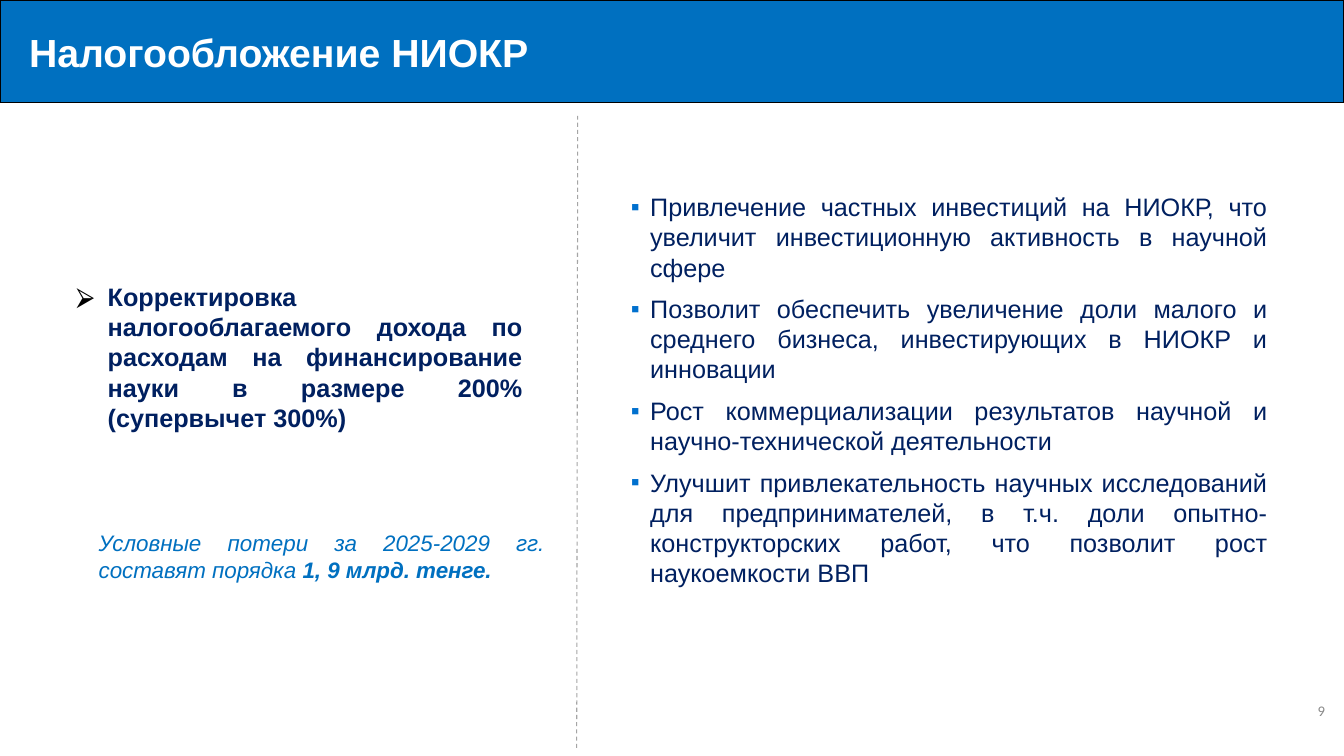
import pptx
import pptx.util
import pptx.dml.color
import pptx.enum.dml
import pptx.enum.shapes
import pptx.enum.text
import pptx.oxml.ns
from lxml import etree

Inches = pptx.util.Inches
Pt = pptx.util.Pt
ALIGN = pptx.enum.text.PP_ALIGN
ANCHOR = pptx.enum.text.MSO_ANCHOR
qn = pptx.oxml.ns.qn


def color(hex_value):
    return pptx.dml.color.RGBColor.from_string(hex_value)


class SlideBuilder:
    BLUE = "0070C0"
    NAVY = "002060"
    FONT = "Arial"

    def __init__(self, slide):
        self.slide = slide

    def banner(self, left, top, width, height):
        shape = self.slide.shapes.add_shape(
            pptx.enum.shapes.MSO_SHAPE.RECTANGLE,
            Inches(left), Inches(top), Inches(width), Inches(height))
        shape.shadow.inherit = False
        shape.fill.solid()
        shape.fill.fore_color.rgb = color(self.BLUE)
        shape.line.color.rgb = color("000000")
        shape.line.width = Pt(1)
        shape.text_frame.vertical_anchor = ANCHOR.MIDDLE
        return shape.text_frame

    def text_box(self, left, top, width, height, anchor=ANCHOR.TOP):
        box = self.slide.shapes.add_textbox(
            Inches(left), Inches(top), Inches(width), Inches(height))
        box.text_frame.word_wrap = True
        box.text_frame.vertical_anchor = anchor
        return box.text_frame

    def paragraph(self, frame, align=ALIGN.JUSTIFY, before=0, indent=0, bullet=None):
        """Start a paragraph; bullet is a (character, colour) pair that hangs in the indent."""
        first = frame.paragraphs[0]
        paragraph = frame.add_paragraph() if first.runs else first
        paragraph.alignment = align
        paragraph.space_before = Pt(before)
        properties = paragraph._p.get_or_add_pPr()
        properties.set("marL", str(Inches(indent)))
        properties.set("indent", str(-Inches(indent) if bullet else 0))
        if bullet:
            mark, mark_color = bullet
            fill = etree.SubElement(properties, qn("a:buClr"))
            etree.SubElement(fill, qn("a:srgbClr"), val=mark_color)
            etree.SubElement(properties, qn("a:buFont"), typeface=self.FONT)
            etree.SubElement(properties, qn("a:buChar"), char=mark)
        return paragraph

    def run(self, paragraph, text, size, text_color, bold=False, italic=False, font=FONT):
        run = paragraph.add_run()
        run.text = text
        run.font.name = font
        run.font.size = Pt(size)
        run.font.color.rgb = color(text_color)
        run.font.bold = bold
        run.font.italic = italic

    def dashed_line(self, x1, y1, x2, y2, line_color, width):
        line = self.slide.shapes.add_connector(
            pptx.enum.shapes.MSO_CONNECTOR.STRAIGHT,
            Inches(x1), Inches(y1), Inches(x2), Inches(y2))
        line.line.color.rgb = color(line_color)
        line.line.width = Pt(width)
        line.line.dash_style = pptx.enum.dml.MSO_LINE.DASH
        etree.SubElement(line._element.spPr, qn("a:effectLst"))


BENEFITS = [
    "Привлечение частных инвестиций на НИОКР, что увеличит инвестиционную "
    "активность в научной сфере",
    "Позволит обеспечить увеличение доли малого и среднего бизнеса, "
    "инвестирующих в НИОКР и инновации",
    "Рост коммерциализации результатов научной и научно-технической деятельности",
    "Улучшит привлекательность научных исследований для предпринимателей, "
    "в т.ч. доли опытно-конструкторских работ, что позволит рост наукоемкости ВВП",
]


def main():
    deck = pptx.Presentation()
    deck.slide_width = Inches(13.33)
    deck.slide_height = Inches(7.5)
    builder = SlideBuilder(deck.slides.add_slide(deck.slide_layouts[6]))

    # Title banner
    title = builder.paragraph(builder.banner(0, 0, 13.33, 1.02), ALIGN.LEFT, indent=0.19)
    builder.run(title, "Налогообложение НИОКР", 28, "FFFFFF", bold=True)

    # Page number
    page_number = builder.paragraph(
        builder.text_box(11.99, 6.69, 1.25, 0.73, ANCHOR.MIDDLE), ALIGN.RIGHT)
    builder.run(page_number, "9", 10.5, "888888", font="Calibri")

    # Proposed measure
    measure = builder.paragraph(
        builder.text_box(0.66, 2.74, 4.62, 1.62), indent=0.31, bullet=("⮚", "000000"))
    builder.run(measure, "Корректировка налогооблагаемого дохода по расходам на "
                "финансирование науки в размере 200% (супервычет 300%)",
                18, builder.NAVY, bold=True)

    # Expected benefits
    benefits_frame = builder.text_box(6.16, 1.85, 6.51, 4.87)
    for index, benefit in enumerate(BENEFITS):
        item = builder.paragraph(benefits_frame, before=8 if index else 0,
                                 indent=0.19, bullet=("▪", "0070CE"))
        builder.run(item, benefit, 18, builder.NAVY)

    # Divider between measure and benefits
    builder.dashed_line(5.72, 7.42, 5.73, 1.15, "A5A5A5", 0.75)

    # Estimated losses
    losses = builder.paragraph(builder.text_box(0.88, 5.2, 4.62, 0.66))
    builder.run(losses, "Условные потери за 2025-2029 гг. составят порядка ",
                16, builder.BLUE, italic=True)
    builder.run(losses, "1, 9 млрд. тенге.", 16, builder.BLUE, bold=True, italic=True)

    deck.save("out.pptx")


if __name__ == "__main__":
    main()
